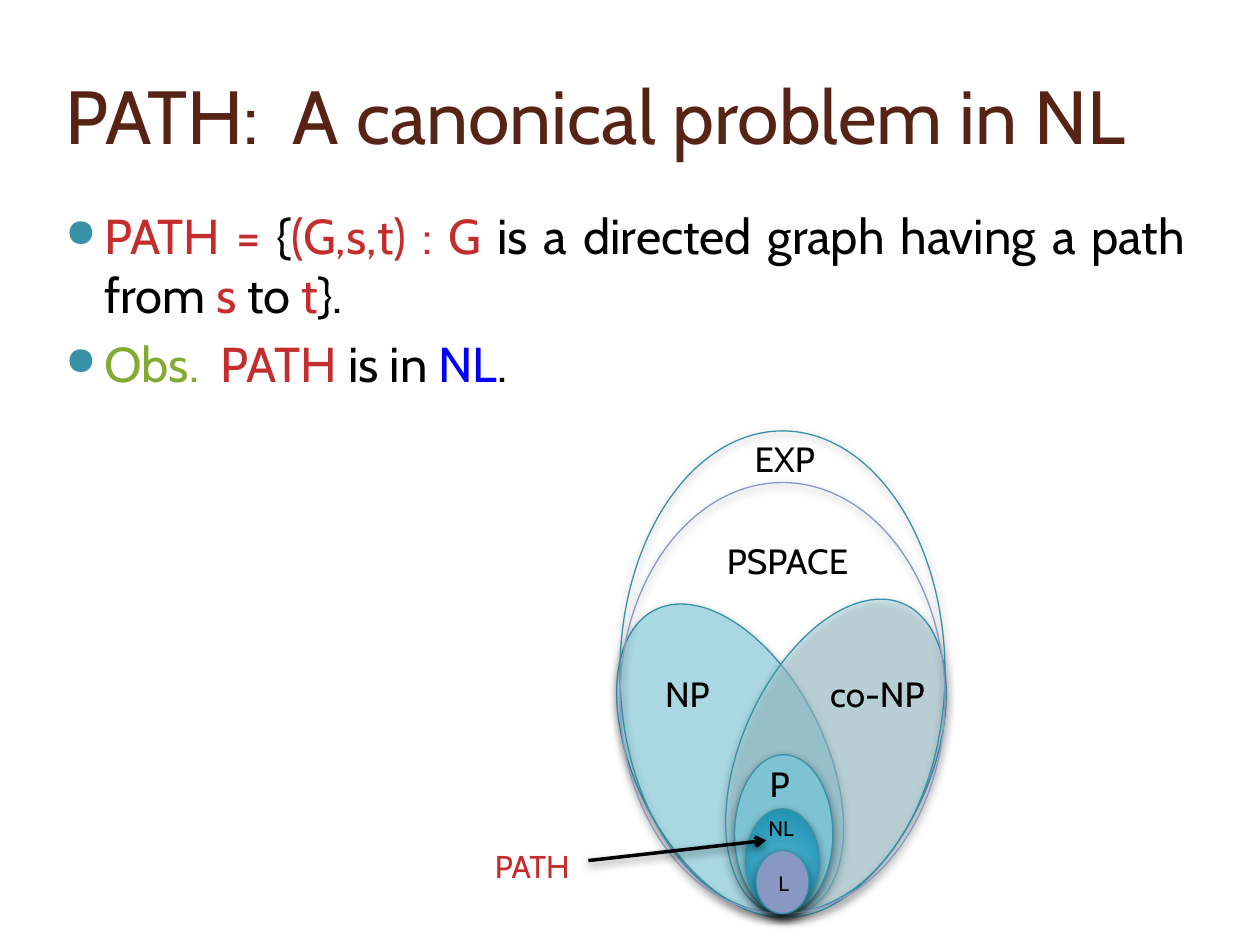
from lxml.etree import SubElement
from pptx import Presentation
from pptx.dml.color import RGBColor
from pptx.enum.shapes import MSO_CONNECTOR, MSO_SHAPE
from pptx.enum.text import MSO_ANCHOR, PP_ALIGN
from pptx.oxml.ns import qn
from pptx.util import Inches, Pt

FONT = "Cabin"
COLORS = {
    "title": "572314", "text": "000000", "red": "C32D2E", "green": "84AA33",
    "blue": "0000FF", "teal": "3891A7", "light": "A9D7E2", "medium": "7EC3D4",
    "violet": "8898C3",
}
NL_GRADIENT = [(0, "45ACCC"), (15, "45ACCB"), (62, "2B9AB9"), (97, "1C8AA7"), (100, "0E89A7")]


def add_xml(parent, tag, **attributes):
    return SubElement(parent, qn(tag), {name: str(value) for name, value in attributes.items()})


def set_alpha(parent, percent):
    add_xml(parent, "a:alpha", val=percent * 1000)


class SlideBuilder:
    def __init__(self, slide):
        self.slide = slide

    def color(self, name):
        return RGBColor.from_string(COLORS[name])

    def add_shadow(self, shape):
        effects = shape._element.spPr.find(qn("a:effectLst"))
        if effects is None:
            effects = add_xml(shape._element.spPr, "a:effectLst")
        shadow = add_xml(effects, "a:outerShdw", blurRad=Pt(5), dist=Pt(2),
                         dir=90 * 60000, rotWithShape=0)
        set_alpha(add_xml(shadow, "a:srgbClr", val=COLORS["text"]), 43)

    def text_box(self, left, top, width, height):
        box = self.slide.shapes.add_textbox(*map(Inches, (left, top, width, height)))
        box.text_frame.word_wrap = True
        return box.text_frame

    def label(self, text, left, top, width, height, size=20, color="text"):
        frame = self.text_box(left, top, width, height)
        paragraph = frame.paragraphs[0]
        paragraph.text = text
        paragraph.font.name = FONT
        paragraph.font.size = Pt(size)
        paragraph.font.color.rgb = self.color(color)
        return frame

    def bullets(self, items, left, top, width, height):
        """Each item is a list of (text, color name) runs."""
        frame = self.text_box(left, top, width, height)
        for index, runs in enumerate(items):
            paragraph = frame.add_paragraph() if index else frame.paragraphs[0]
            paragraph.alignment = PP_ALIGN.JUSTIFY
            paragraph.space_before = Pt(6)
            paragraph.font.name = FONT
            paragraph.font.size = Pt(28)
            properties = paragraph._p.get_or_add_pPr()
            properties.set("marL", str(Inches(0.4)))
            properties.set("indent", str(Inches(-0.31)))
            bullet_color = add_xml(properties, "a:buClr")
            add_xml(bullet_color, "a:srgbClr", val=COLORS["teal"])
            add_xml(properties, "a:buSzPct", val=80000)
            add_xml(properties, "a:buChar", char="●")
            # Default run properties must follow the bullet settings.
            properties.append(properties.find(qn("a:defRPr")))
            for text, color in runs:
                run = paragraph.add_run()
                run.text = text
                run.font.color.rgb = self.color(color)

    def ellipse(self, left, top, width, height, fill=None, line="teal", rotation=0, opacity=100):
        shape = self.slide.shapes.add_shape(
            MSO_SHAPE.OVAL, *map(Inches, (left, top, width, height)))
        shape.rotation = rotation
        if fill:
            shape.fill.solid()
            shape.fill.fore_color.rgb = self.color(fill)
            if opacity < 100:
                set_alpha(shape._element.spPr.find(qn("a:solidFill"))[0], opacity)
        else:
            shape.fill.background()
        shape.line.color.rgb = self.color(line)
        shape.line.width = Pt(0.75)
        shape.shadow.inherit = False
        self.add_shadow(shape)
        return shape

    def radial_fill(self, shape, stops):
        shape.fill.gradient()
        gradient = shape._element.spPr.find(qn("a:gradFill"))
        for child in list(gradient):
            gradient.remove(child)
        stop_list = add_xml(gradient, "a:gsLst")
        for position, color in stops:
            stop = add_xml(stop_list, "a:gs", pos=position * 1000)
            add_xml(stop, "a:srgbClr", val=color)
        circle = add_xml(gradient, "a:path", path="circle")
        add_xml(circle, "a:fillToRect", l=50000, t=50000, r=50000, b=50000)

    def arrow(self, start, end):
        connector = self.slide.shapes.add_connector(
            MSO_CONNECTOR.STRAIGHT, *map(Inches, (*start, *end)))
        connector.line.color.rgb = self.color("text")
        connector.line.width = Pt(2)
        add_xml(connector.line._get_or_add_ln(), "a:tailEnd", type="arrow")
        self.add_shadow(connector)


def main():
    presentation = Presentation()
    presentation.slide_width, presentation.slide_height = Inches(10), Inches(7.5)
    builder = SlideBuilder(presentation.slides.add_slide(presentation.slide_layouts[6]))

    title = builder.label("PATH:  A canonical problem in NL", 0.42, 0.33, 8.83, 1.15, 43, "title")
    title.vertical_anchor = MSO_ANCHOR.MIDDLE
    builder.bullets([
        [("PATH = ", "red"), ("{", "text"), ("(G,s,t) : G ", "red"),
         ("is a directed graph having a path from", "text"), (" s ", "red"),
         ("to ", "text"), ("t", "red"), ("}.", "text")],
        [("Obs.  ", "green"), ("PATH", "red"), (" is in ", "text"),
         ("NL", "blue"), (".", "text")],
    ], 0.33, 1.58, 9.17, 5.5)

    builder.ellipse(5.04, 4.7, 1.51, 2.67, "light", rotation=333.5)
    builder.ellipse(5.88, 4.68, 1.51, 2.67, "light", rotation=23.7, opacity=50)
    builder.ellipse(5.83, 5.99, 0.78, 1.26, "medium")
    builder.label("NP", 5.18, 5.29, 0.6, 0.44)
    builder.label("co-NP", 6.49, 5.29, 1.12, 0.44)
    builder.label("P", 6.01, 6, 0.6, 0.44)

    builder.ellipse(4.92, 3.42, 2.58, 3.83)
    builder.label("EXP", 5.89, 3.42, 0.86, 0.44)
    builder.ellipse(4.92, 3.83, 2.58, 3.42, line="violet")
    builder.label("PSPACE", 5.67, 4.23, 1.17, 0.44)

    nl_class = builder.ellipse(5.92, 6.42, 0.58, 0.83)
    builder.radial_fill(nl_class, NL_GRADIENT)
    builder.label("NL", 6, 6.42, 0.42, 0.3, 12)
    builder.ellipse(6, 6.75, 0.42, 0.5, "violet")
    builder.label("L", 6.08, 6.86, 0.25, 0.3, 12)

    builder.arrow((4.67, 6.83), (6.08, 6.67))
    builder.label("PATH", 3.83, 6.67, 0.83, 0.42, 18, "red")
    presentation.save("out.pptx")


if __name__ == "__main__":
    main()
